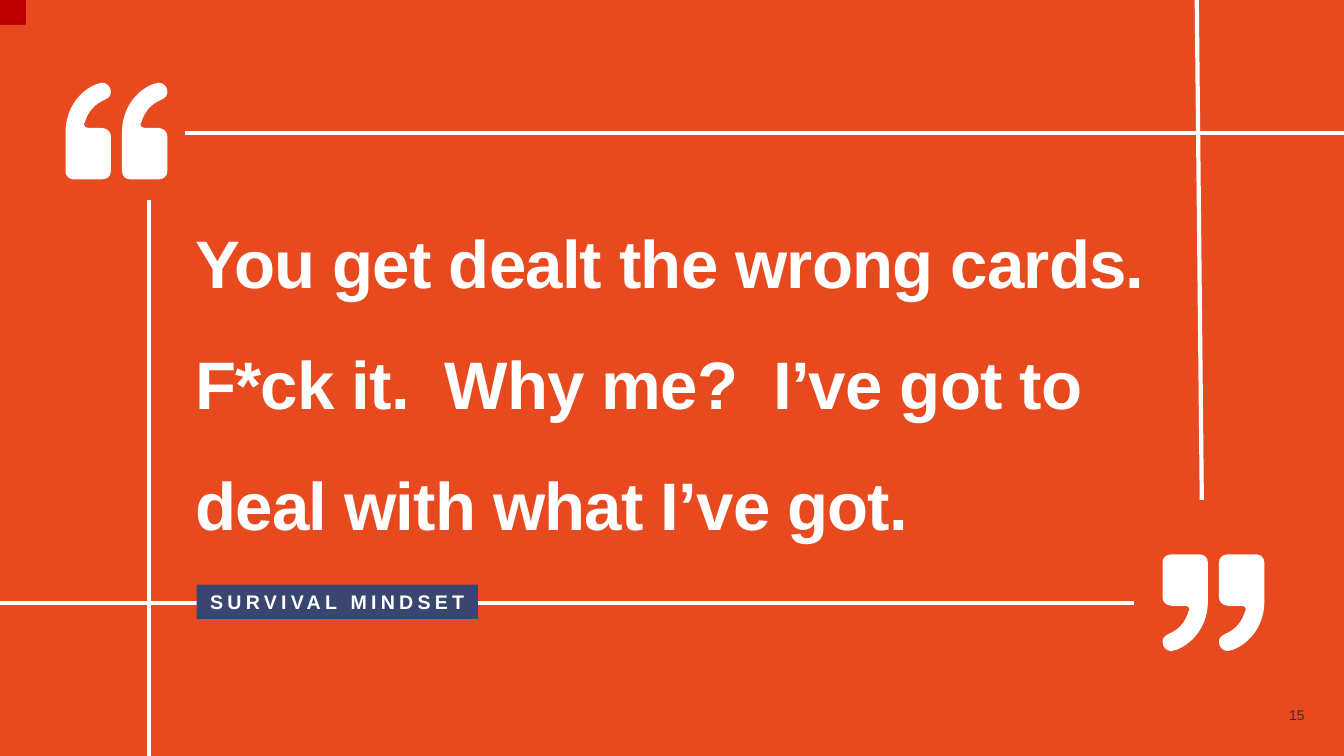
from lxml.etree import SubElement
from pptx import Presentation
from pptx.dml.color import RGBColor
from pptx.enum.shapes import MSO_CONNECTOR, MSO_SHAPE
from pptx.enum.text import MSO_ANCHOR, PP_ALIGN
from pptx.oxml.ns import qn
from pptx.util import Inches, Pt

WIDE, HIGH = 13.33, 7.5
HUES = {"back": "E84A20", "white": "FFFFFF", "navy": "39466F", "red": "C00000", "grey": "333333"}
QUOTE = ["You get dealt the wrong cards.", "F*ck it.  Why me?  I’ve got to deal with what I’ve got."]
LABEL = "SURVIVAL MINDSET"
NUMBER = "15"
RULES = [
    (11.87, 0, 11.92, 4.96),
    (1.48, 1.98, 1.48, HIGH),
    (WIDE, 1.32, 1.83, 1.32),
    (11.25, 5.98, 0, 5.98),
]
START = (0, 0.88)
MARK = [
    (0, 0.93, 0.04, 0.96, 0.08, 0.96),
    (0.36, 0.96),
    (0.41, 0.96, 0.45, 0.93, 0.45, 0.88),
    (0.45, 0.53),
    (0.45, 0.49, 0.41, 0.45, 0.36, 0.45),
    (0.22, 0.45),
    (0.2, 0.45, 0.18, 0.43, 0.18, 0.41),
    (0.18, 0.4, 0.19, 0.4, 0.19, 0.4),
    (0.22, 0.29, 0.29, 0.21, 0.39, 0.17),
    (0.43, 0.15, 0.45, 0.13, 0.45, 0.09),
    (0.45, 0.04, 0.41, 0, 0.36, 0),
    (0.35, 0, 0.34, 0, 0.33, 0.01),
    (0.32, 0.01),
    (0.13, 0.08, 0, 0.27, 0, 0.49),
]
STEP, GRAIN = 0.56, 1000
OPEN, CLOSE = (0.65, 0.82), (12.54, 6.46)

deck = Presentation()
deck.slide_width, deck.slide_height = Inches(WIDE), Inches(HIGH)
slide = deck.slides.add_slide(deck.slide_layouts[6])
shapes = slide.shapes


def hue(name):
    return RGBColor.from_string(HUES[name])


def paint(shape, name):
    shape.shadow.inherit = False
    shape.fill.solid()
    shape.fill.fore_color.rgb = hue(name)
    shape.line.fill.background()


def block(box, name):
    shape = shapes.add_shape(MSO_SHAPE.RECTANGLE, *map(Inches, box))
    paint(shape, name)
    return shape


def rule(ends):
    line = shapes.add_connector(MSO_CONNECTOR.STRAIGHT, *map(Inches, ends))
    line.line.color.rgb = hue("white")
    line.line.width = Pt(3)
    SubElement(line._element.spPr, qn("a:effectLst"))


def curve(shape):
    steps = iter(list(shape._element.iter(qn("a:lnTo"))))
    for part in MARK * 2:
        head, *rest = [next(steps) for _ in part[::2]]
        if rest:
            head.tag = qn("a:cubicBezTo")
        for step in rest:
            head.append(step[0])
            step.getparent().remove(step)


def quote(base, sign):
    spots = [START] + [spot for part in MARK for spot in zip(part[::2], part[1::2])]
    pen = None
    for col in range(2):
        dots = [
            (round(GRAIN * (base[0] + sign * (x + col * STEP))), round(GRAIN * (base[1] + sign * y)))
            for x, y in spots
        ]
        if pen is None:
            pen = shapes.build_freeform(*dots[0], scale=Inches(1) / GRAIN)
        else:
            pen.move_to(*dots[0])
        pen.add_line_segments(dots[1:], close=True)
    shape = pen.convert_to_shape()
    curve(shape)
    paint(shape, "white")


def write(frame, lines, size, name, align, bold=False, gap=0, lead=1):
    for i, line in enumerate(lines):
        para = frame.add_paragraph() if i else frame.paragraphs[0]
        run = para.add_run()
        run.text = line
        if gap:
            run._r.get_or_add_rPr().set("spc", str(gap))
        para.alignment = align
        para.line_spacing = lead
        font = para.font
        font.name, font.size, font.bold = "Arial", Pt(size), bold
        font.color.rgb = hue(name)


def area(box):
    frame = shapes.add_textbox(*map(Inches, box)).text_frame
    frame.word_wrap = True
    return frame


block((0, 0, WIDE, HIGH), "back")
for ends in RULES:
    rule(ends)
quote(OPEN, 1)
quote(CLOSE, -1)

write(area((1.84, 1.75, 9.84, 3.59)), QUOTE, 48, "white", PP_ALIGN.LEFT, True, -60, 1.5)

tag = block((1.95, 5.8, 2.79, 0.34), "navy").text_frame
tag.word_wrap = False
tag.vertical_anchor = MSO_ANCHOR.MIDDLE
write(tag, [LABEL], 14, "white", PP_ALIGN.CENTER, True, 300)

page = area((12.56, 6.99, 0.38, 0.21))
page.margin_left = page.margin_right = page.margin_top = page.margin_bottom = 0
page.vertical_anchor = MSO_ANCHOR.MIDDLE
write(page, [NUMBER], 10, "grey", PP_ALIGN.RIGHT)

patch = block((0, 0, 0.25, 0.24), "red")
patch.line.color.rgb = hue("red")
patch.line.width = Pt(1)

deck.save("out.pptx")
